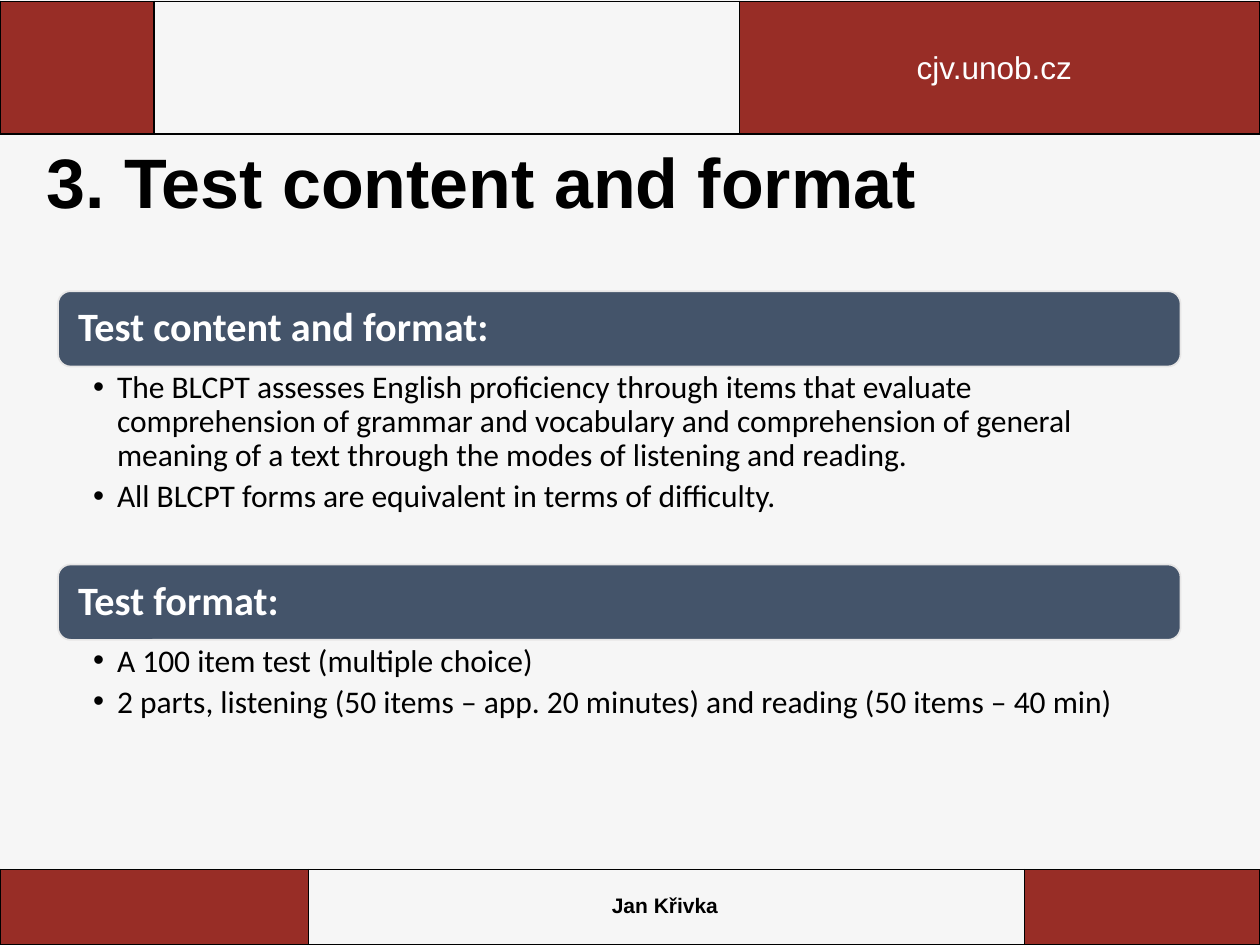
import lxml.etree
import pptx
import pptx.dml.color
import pptx.enum.shapes
import pptx.enum.text
import pptx.oxml.ns
import pptx.util

Cm, Pt = pptx.util.Cm, pptx.util.Pt
ALIGN = pptx.enum.text.PP_ALIGN
ANCHOR = pptx.enum.text.MSO_ANCHOR
qn = pptx.oxml.ns.qn

RED, SLATE, PALE = "982D26", "44546A", "E7E6E6"
BLACK, WHITE, BACKGROUND = "000000", "FFFFFF", "F6F6F6"
HEADING_HEIGHT = 1.52


def rgb(value):
    return pptx.dml.color.RGBColor.from_string(value)


def format_text(p, font, size, color, bold=False, align=ALIGN.LEFT, spacing=0.9):
    p.alignment = align
    p.line_spacing = spacing
    for r in p.runs:
        r.font.name = font
        r.font.size = Pt(size)
        r.font.bold = bold
        r.font.color.rgb = rgb(color)


def add_text(slide, box, text, size, color, **style):
    tb = slide.shapes.add_textbox(*map(Cm, box))
    tf = tb.text_frame
    tf.word_wrap = True
    tf.text = text
    format_text(tf.paragraphs[0], "Arial", size, color, **style)
    return tf


def add_borders(cell):
    tc_pr = cell._tc.get_or_add_tcPr()
    for side in ("lnL", "lnR", "lnT", "lnB"):
        ln = lxml.etree.SubElement(tc_pr, qn(f"a:{side}"), w=str(Pt(1)))
        fill = lxml.etree.SubElement(ln, qn("a:solidFill"))
        lxml.etree.SubElement(fill, qn("a:srgbClr"), val=BLACK)


def add_band(slide, box, widths):
    """Add a one-row table whose outer cells are red and middle cell is clear."""
    table = slide.shapes.add_table(1, len(widths), *map(Cm, box)).table
    table.first_row = table.horz_banding = False
    for column, width in zip(table.columns, widths):
        column.width = Cm(width)
    for cell, color in zip(table.rows[0].cells, (RED, None, RED)):
        add_borders(cell)
        if color:
            cell.fill.solid()
            cell.fill.fore_color.rgb = rgb(color)
        else:
            cell.fill.background()


def add_header(slide, left, top, width, height):
    add_band(slide, (left, top, width, height), (3.1, 11.81, 10.49))
    add_text(slide, (left + 17.3, top + 0.81, 5.49, 1.02), "cjv.unob.cz",
             18, WHITE, align=ALIGN.CENTER, spacing=1.0)


def add_footer(slide, left, top, width, height):
    add_band(slide, (left, top, width, height), (6.22, 14.43, 4.75))
    tf = add_text(slide, (left + 6.38, top + 0.22, 14.05, 1.04), "Jan Křivka",
                  12, BLACK, bold=True, align=ALIGN.CENTER)
    tf.vertical_anchor = ANCHOR.MIDDLE


def add_heading(slide, left, top, width, text):
    sp = slide.shapes.add_shape(
        pptx.enum.shapes.MSO_SHAPE.ROUNDED_RECTANGLE,
        Cm(left), Cm(top), Cm(width), Cm(HEADING_HEIGHT))
    sp.shadow.inherit = False
    sp.fill.solid()
    sp.fill.fore_color.rgb = rgb(SLATE)
    sp.line.color.rgb = rgb(PALE)
    sp.line.width = Pt(1)
    tf = sp.text_frame
    tf.margin_left = tf.margin_right = Cm(0.33)
    tf.vertical_anchor = ANCHOR.MIDDLE
    tf.text = text
    format_text(tf.paragraphs[0], "Calibri", 23, WHITE, bold=True)


def add_bullet(p):
    p_pr = p._p.get_or_add_pPr()
    p_pr.set("marL", str(Cm(0.48)))
    p_pr.set("indent", str(-Cm(0.48)))
    lxml.etree.SubElement(p_pr, qn("a:buFont"), typeface="Arial")
    lxml.etree.SubElement(p_pr, qn("a:buChar"), char="•")


def add_section(slide, left, top, width, height, heading, items):
    add_heading(slide, left, top, width, heading)
    tb = slide.shapes.add_textbox(
        Cm(left), Cm(top + HEADING_HEIGHT + 0.02),
        Cm(width), Cm(height - HEADING_HEIGHT - 0.02))
    tf = tb.text_frame
    tf.word_wrap = True
    tf.margin_left, tf.margin_right = Cm(0.71), Cm(0.46)
    tf.margin_top = tf.margin_bottom = Cm(0.08)
    tf.text = "\n".join(items)
    for p in tf.paragraphs:
        add_bullet(p)
        format_text(p, "Calibri", 18, BLACK)
        p.space_after = Pt(4)


def main():
    prs = pptx.Presentation()
    prs.slide_width, prs.slide_height = Cm(25.4), Cm(19.05)
    slide = prs.slides.add_slide(prs.slide_layouts[6])
    slide.background.fill.solid()
    slide.background.fill.fore_color.rgb = rgb(BACKGROUND)

    add_header(slide, 0, 0.03, 25.4, 2.67)
    add_footer(slide, 0, 17.53, 25.4, 1.52)
    add_text(slide, (0.69, 2.87, 24.26, 3.68), "3. Test content and format",
             40, BLACK, bold=True)
    add_section(slide, 1.17, 5.87, 22.63, 5.51, "Test content and format:", [
        "The BLCPT assesses English proficiency through items that evaluate "
        "comprehension of grammar and vocabulary and comprehension of general "
        "meaning of a text through the modes of listening and reading.",
        "All BLCPT forms are equivalent in terms of difficulty.",
    ])
    add_section(slide, 1.17, 11.38, 22.63, 4.11, "Test format:", [
        "A 100 item test (multiple choice)",
        "2 parts, listening (50 items – app. 20 minutes) and reading "
        "(50 items – 40 min)",
    ])
    prs.save("out.pptx")


if __name__ == "__main__":
    main()
